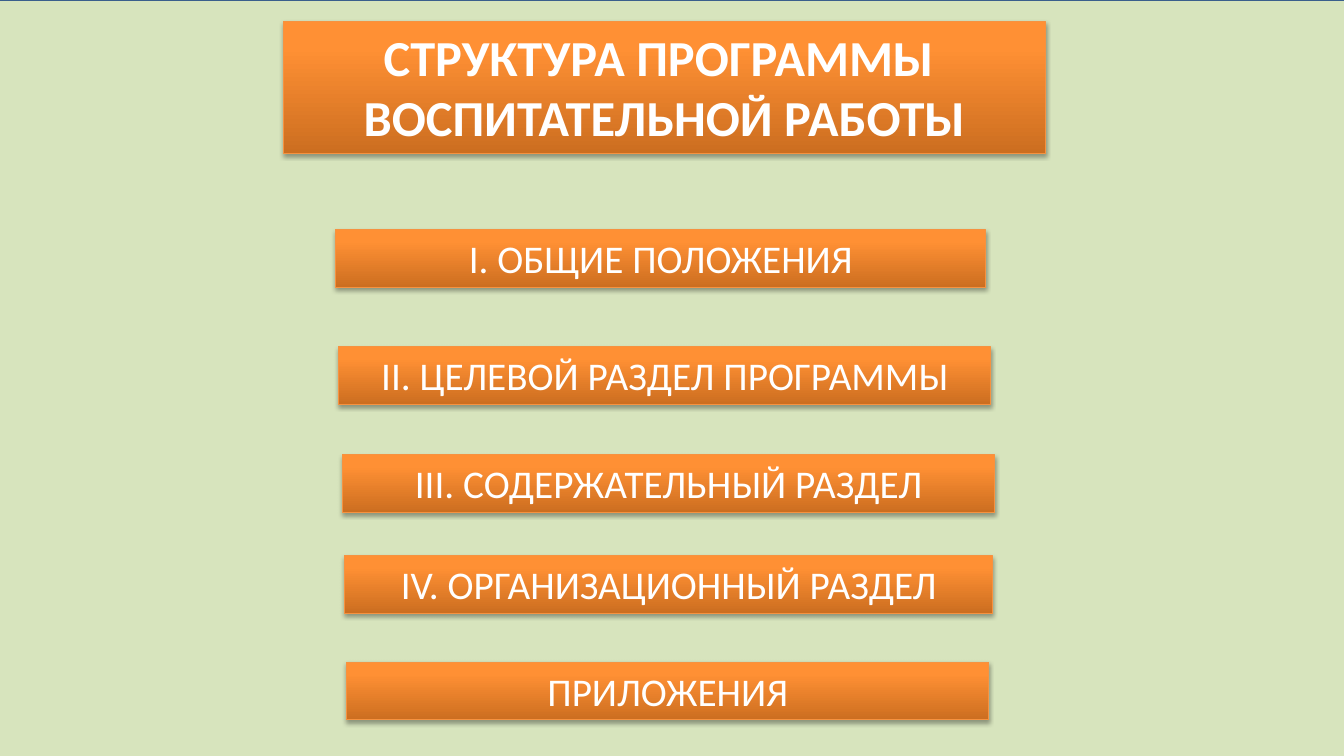
from dataclasses import dataclass

import lxml.etree
import pptx
import pptx.dml.color
import pptx.enum.shapes
import pptx.enum.text
import pptx.oxml.ns
import pptx.util

COLORS = {
    "background": "D7E4BD",
    "frame": "3A5F8C",
    "dark orange": "CC6E20",
    "orange": "FF9034",
    "light orange": "FF9136",
    "outline": "F69240",
    "shadow": "000000",
    "text": "FFFFFF",
}
# Gradient from the bottom edge up: percent and colour
GRADIENT = [(0, "dark orange"), (80, "orange"), (100, "light orange")]


@dataclass
class Banner:
    text: str
    left: float
    top: float
    width: float
    height: float = 41.2
    size: float = 28
    bold: bool = False


BANNERS = [
    Banner("СТРУКТУРА ПРОГРАММЫ \vВОСПИТАТЕЛЬНОЙ РАБОТЫ", 202.3, 15.1, 544.5, 94.4, 36, True),
    Banner("I. ОБЩИЕ ПОЛОЖЕНИЯ", 239.6, 164, 464.6),
    Banner("II. ЦЕЛЕВОЙ РАЗДЕЛ ПРОГРАММЫ", 241.9, 247.6, 465.8),
    Banner("III. СОДЕРЖАТЕЛЬНЫЙ РАЗДЕЛ", 244.6, 324.7, 465.8),
    Banner("IV. ОРГАНИЗАЦИОННЫЙ РАЗДЕЛ", 246.1, 396.8, 463),
    Banner("ПРИЛОЖЕНИЯ", 247.4, 473, 459),
]


def color(name: str) -> pptx.dml.color.RGBColor:
    return pptx.dml.color.RGBColor.from_string(COLORS[name])


def add_element(parent, tag: str, **attributes: str):
    return lxml.etree.SubElement(parent, pptx.oxml.ns.qn(tag), attributes)


def add_rectangle(slide, left: float, top: float, width: float, height: float,
                  line_color: str, line_width: float):
    shape = slide.shapes.add_shape(
        pptx.enum.shapes.MSO_SHAPE.RECTANGLE,
        *(pptx.util.Pt(length) for length in (left, top, width, height)))
    shape.line.color.rgb = color(line_color)
    shape.line.width = pptx.util.Pt(line_width)
    shape.shadow.inherit = False
    return shape


def fill_gradient(shape) -> None:
    shape.fill.gradient()
    shape.fill.gradient_angle = 90
    stops = shape.element.spPr.find(".//" + pptx.oxml.ns.qn("a:gsLst"))
    for stop in list(stops):
        stops.remove(stop)
    for percent, name in GRADIENT:
        stop = add_element(stops, "a:gs", pos=str(percent * 1000))
        add_element(stop, "a:srgbClr", val=COLORS[name])


def add_shadow(shape) -> None:
    effects = shape.element.spPr.find(pptx.oxml.ns.qn("a:effectLst"))
    shadow = add_element(effects, "a:outerShdw",
                         blurRad=str(pptx.util.Pt(3.1)), dist=str(pptx.util.Pt(1.8)),
                         dir="5400000", rotWithShape="0")
    shade = add_element(shadow, "a:srgbClr", val=COLORS["shadow"])
    add_element(shade, "a:alpha", val="35000")


def add_banner(slide, banner: Banner) -> None:
    shape = add_rectangle(slide, banner.left, banner.top, banner.width, banner.height,
                          "outline", 0.75)
    fill_gradient(shape)
    add_shadow(shape)

    frame = shape.text_frame
    frame.word_wrap = True
    frame.auto_size = pptx.enum.text.MSO_AUTO_SIZE.SHAPE_TO_FIT_TEXT
    frame.vertical_anchor = pptx.enum.text.MSO_ANCHOR.TOP
    paragraph = frame.paragraphs[0]
    paragraph.text = banner.text
    paragraph.alignment = pptx.enum.text.PP_ALIGN.CENTER
    paragraph.font.name = "Calibri"
    paragraph.font.size = pptx.util.Pt(banner.size)
    paragraph.font.bold = banner.bold
    paragraph.font.color.rgb = color("text")


def main() -> None:
    presentation = pptx.Presentation()
    presentation.slide_width = pptx.util.Pt(960)
    presentation.slide_height = pptx.util.Pt(540)
    slide = presentation.slides.add_slide(presentation.slide_layouts[6])

    # Green backdrop
    backdrop = add_rectangle(slide, -10.8, 0, 987.8, 550.8, "frame", 2)
    backdrop.fill.solid()
    backdrop.fill.fore_color.rgb = color("background")

    # Title and sections
    for banner in BANNERS:
        add_banner(slide, banner)

    presentation.save("out.pptx")


if __name__ == "__main__":
    main()
